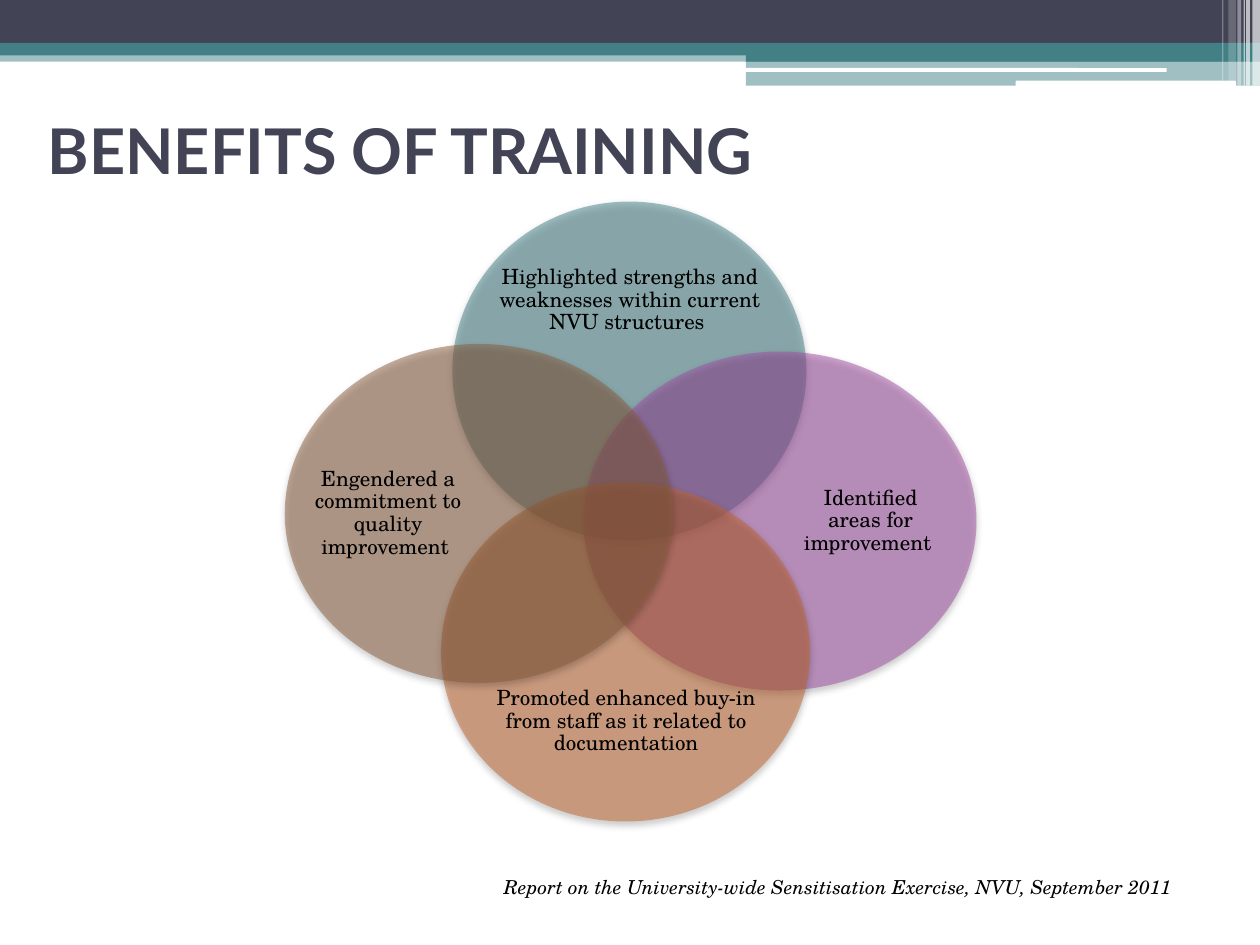
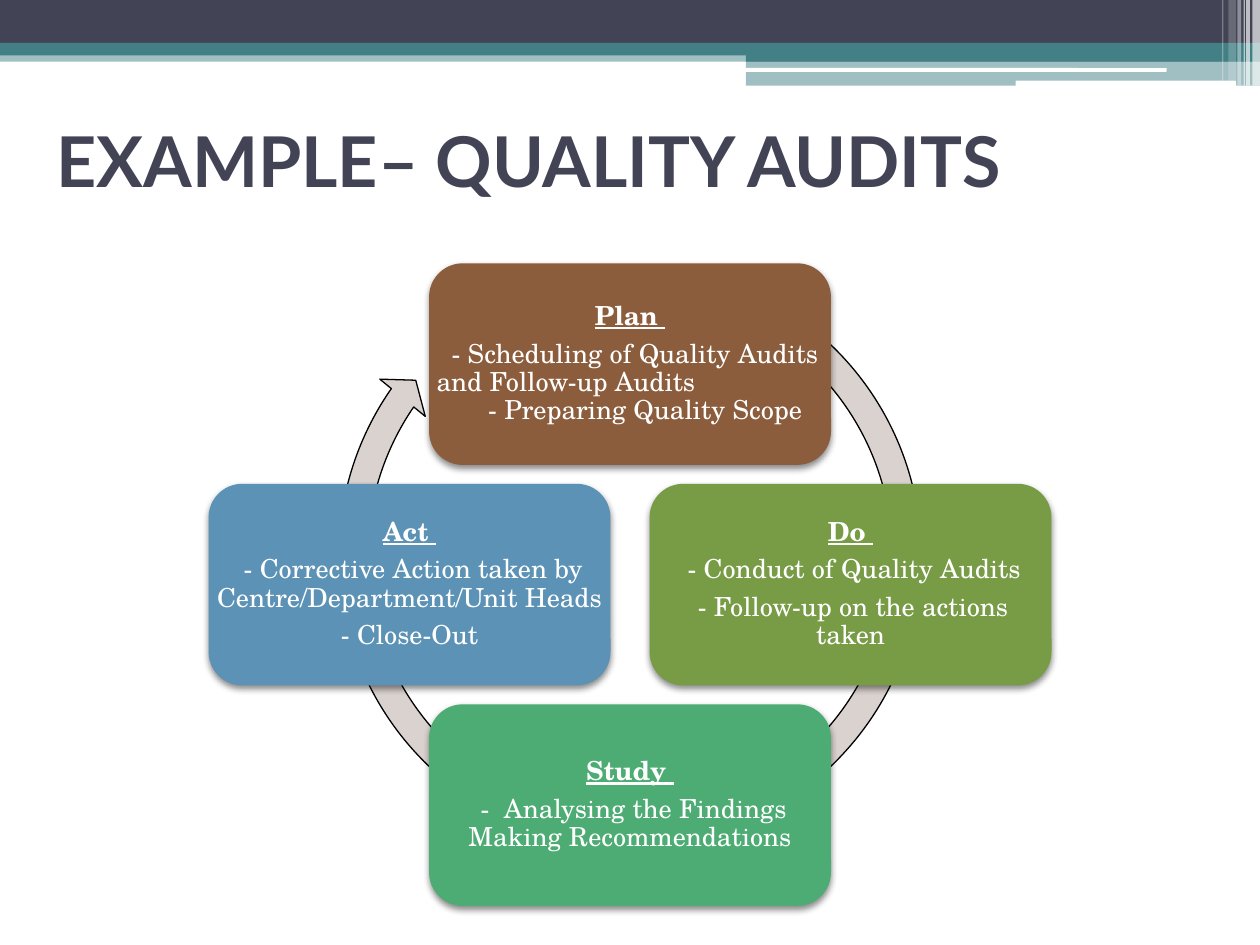
from lxml.etree import SubElement
from pptx import Presentation
from pptx.dml.color import RGBColor
from pptx.enum.shapes import MSO_SHAPE as Preset
from pptx.enum.text import MSO_ANCHOR as Anchor, MSO_AUTO_SIZE as AutoSize, PP_ALIGN as Align
from pptx.oxml.ns import qn
from pptx.util import Inches, Pt

COLOURS = {
    "navy": "424456", "teal": "438086", "white": "FFFFFF", "black": "000000",
    "purple": "A04DA3", "orange": "C4652D", "brown": "8B5D3D",
    "olive": "789B45", "green": "4DAC73", "blue": "5C92B5", "arrow": "DAD2CE",
}
TITLE_FONT = "Lato"
BODY_FONT = "TeX Gyre Schola"


def colour(name):
    return RGBColor.from_string(COLOURS[name])


def add_filled(slide, preset, box, fill, opacity=100, shadow=None):
    """Draw a borderless shape; shadow is (opacity in percent, blur in points)."""
    shape = slide.shapes.add_shape(preset, *map(Inches, box))
    shape.fill.solid()
    shape.fill.fore_color.rgb = colour(fill)
    shape.line.fill.background()
    shape.shadow.inherit = False
    properties = shape.element.spPr
    if opacity < 100:
        set_opacity(properties.find(qn("a:solidFill"))[0], opacity)
    if shadow:
        shadow_opacity, blur = shadow
        outer = SubElement(properties.find(qn("a:effectLst")), qn("a:outerShdw"),
                           blurRad=str(Pt(blur)), dist=str(Pt(2)), dir="5400000",
                           rotWithShape="0")
        shade = SubElement(outer, qn("a:srgbClr"), val=COLOURS["black"])
        set_opacity(shade, shadow_opacity)
    return shape


def set_opacity(colour_element, percent):
    SubElement(colour_element, qn("a:alpha"), val=str(percent * 1000))


def add_text_box(slide, box, inset=None, anchor=Anchor.MIDDLE):
    frame = slide.shapes.add_textbox(*map(Inches, box)).text_frame
    frame.word_wrap = True
    frame.vertical_anchor = anchor
    if inset is not None:
        frame.margin_left = frame.margin_right = Inches(inset)
        frame.margin_top = frame.margin_bottom = Inches(inset)
    return frame


def write(frame, text, size, font=BODY_FONT, fill="black", bold=False, italic=False,
          underline=False, align=Align.LEFT, spacing=1.0, after=0, indent=0):
    """Add a formatted paragraph, using the frame's first one while it is empty."""
    paragraph = frame.paragraphs[0]
    if paragraph.runs:
        paragraph = frame.add_paragraph()
    paragraph.alignment = align
    paragraph.line_spacing = spacing
    paragraph.space_after = Pt(after)
    if indent:
        properties = paragraph._p.get_or_add_pPr()
        properties.set("marL", "0")
        properties.set("indent", str(Inches(indent)))
    run = paragraph.add_run()
    run.text = text
    run.font.size = Pt(size)
    run.font.name = font
    run.font.color.rgb = colour(fill)
    run.font.bold = bold
    run.font.italic = italic
    run.font.underline = underline


def add_header(slide):
    bands = [
        ((0, 0.4, 10, 0.09), "teal", 50),
        ((0, 0, 10, 0.34), "navy", 100),
        ((0, 0.34, 10, 0.1), "teal", 100),
        ((5.92, 0.39, 4.08, 0.1), "teal", 100),
        ((5.92, 0.48, 4.08, 0.2), "teal", 50),
    ]
    for box, fill, opacity in bands:
        add_filled(slide, Preset.RECTANGLE, box, fill, opacity)
    for box in [(5.91, 0.54, 3.35, 0.03), (8.06, 0.64, 1.75, 0.05)]:
        add_filled(slide, Preset.ROUNDED_RECTANGLE, box, "white")
    stripes = [
        (9.94, 0.06, 0.68, 65), (9.89, 0.03, 0.68, 65), (9.87, 0.01, 0.68, 60),
        (9.82, 0.03, 0.68, 40), (9.75, 0.06, 0.64, 20), (9.7, 0.01, 0.64, 30),
    ]
    for left, width, height, opacity in stripes:
        add_filled(slide, Preset.RECTANGLE, (left, 0, width, height), "white", opacity)


def add_titled_slide(presentation, title, box, size):
    slide = presentation.slides.add_slide(presentation.slide_layouts[6])
    add_header(slide)
    write(add_text_box(slide, box), title, size, font=TITLE_FONT, fill="navy", bold=True)
    return slide


def add_venn(slide, left, top):
    """Draw four overlapping ellipses; each label is placed relative to its ellipse."""
    height = 2.69
    ellipses = [
        (1.33, 0, 2.81, "teal", (0.33, 0.36, 2.16, 0.85),
         "Highlighted strengths and weaknesses within current NVU structures "),
        (2.37, 1.19, 3.12, "purple", (1.68, 0.31, 1.2, 2.07),
         "Identified areas for improvement "),
        (1.24, 2.23, 2.93, "orange", (0.34, 1.47, 2.26, 0.85),
         "Promoted enhanced buy-in from staff as it related to documentation"),
        (0, 1.13, 3.08, "brown", (0.23, 0.31, 1.18, 2.07),
         "Engendered a commitment to quality improvement "),
    ]
    for x, y, width, fill, (label_x, label_y, *label_size), text in ellipses:
        x, y = left + x, top + y
        add_filled(slide, Preset.OVAL, (x, y, width, height), fill, 50, shadow=(40, 4.1))
        frame = add_text_box(slide, (x + label_x, y + label_y, *label_size), inset=0)
        write(frame, text, 12, align=Align.CENTER, spacing=0.9, after=4.2)


def add_source_line(slide, box, text):
    frame = add_text_box(slide, box, anchor=Anchor.TOP)
    frame.auto_size = AutoSize.SHAPE_TO_FIT_TEXT
    write(frame, text, 11, italic=True)


def add_cycle_arrow(slide, box):
    arrow = add_filled(slide, Preset.CIRCULAR_ARROW, box, "arrow")
    arrow.line.color.rgb = colour("black")
    arrow.line.width = Pt(0.75)
    for index, value in enumerate([0.047, 2.729, 128.857, 179.939, 0.048]):
        arrow.adjustments[index] = value


def add_step_card(slide, box, fill, heading, lines):
    """Draw a card; each line is its text and the formats that differ from the rest."""
    add_filled(slide, Preset.ROUNDED_RECTANGLE, box, fill, shadow=(45, 4))
    frame = add_text_box(slide, box, inset=0.06)
    style = {"size": 15, "fill": "white", "align": Align.CENTER, "spacing": 0.9, "after": 5.25}
    write(frame, heading, bold=True, underline=True, **style)
    for text, changes in lines:
        write(frame, text, **{**style, **changes})


def add_cycle(slide, centre_x, centre_y):
    add_cycle_arrow(slide, (centre_x - 2.43, centre_y - 2.66, 4.86, 4.86))
    width, height, radius = 3.19, 1.6, 1.75
    steps = [
        (0, -1, "brown", "Plan ", [
            ("- Scheduling of Quality Audits and Follow-up Audits",
             {"align": Align.LEFT, "indent": 0.12, "after": 0}),
            ("- Preparing Quality Scope", {"align": Align.LEFT, "indent": 0.41})]),
        (1, 0, "olive", "Do ", [
            (" - Conduct of Quality Audits", {}),
            ("- Follow-up on the actions taken", {"indent": 0.04})]),
        (0, 1, "green", "Study ", [
            (" -  Analysing the Findings Making Recommendations", {})]),
        (-1, 0, "blue", "Act ", [
            (" - Corrective Action taken by Centre/Department/Unit Heads", {}),
            ("- Close-Out", {})]),
    ]
    for across, down, fill, heading, lines in steps:
        box = (centre_x + across * radius - width / 2,
               centre_y + down * radius - height / 2, width, height)
        add_step_card(slide, box, fill, heading, lines)


def build_benefits(presentation):
    slide = add_titled_slide(presentation, "BENEFITS OF TRAINING", (0.28, 0.6, 9, 1.17), 36)
    add_venn(slide, 2.26, 1.6)
    add_source_line(slide, (3.9, 6.9, 5.83, 0.29),
                    "Report on the University-wide Sensitisation Exercise, NVU, September 2011")


def build_quality_audits(presentation):
    slide = add_titled_slide(presentation, "EXAMPLE– QUALITY AUDITS",
                             (0.35, 0.68, 9.65, 1.17), 40)
    add_cycle(slide, 5, 4.64)


def main():
    presentation = Presentation()
    presentation.slide_width = Inches(10)
    presentation.slide_height = Inches(7.5)
    build_benefits(presentation)
    build_quality_audits(presentation)
    presentation.save("out.pptx")


if __name__ == "__main__":
    main()
